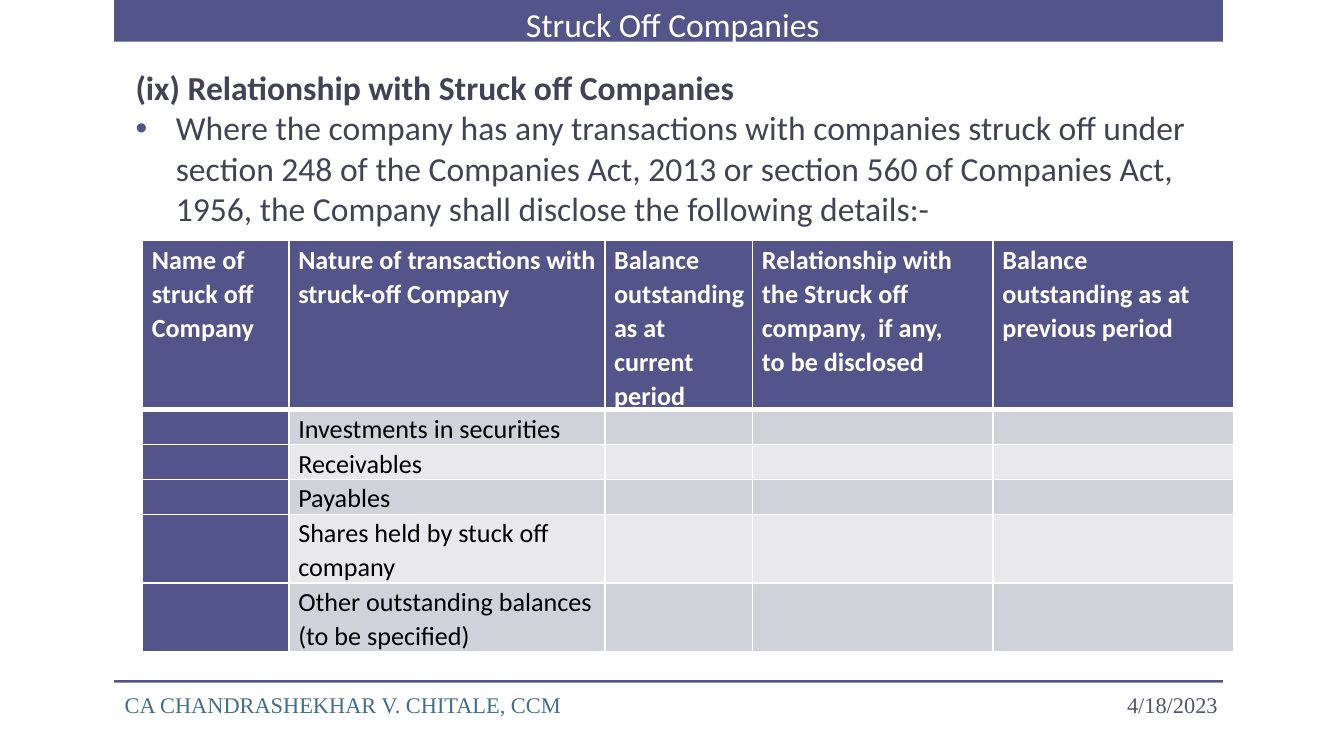
from lxml.etree import SubElement
from pptx import Presentation
from pptx.dml.color import RGBColor
from pptx.enum.shapes import MSO_SHAPE as Shape
from pptx.enum.text import MSO_ANCHOR as Anchor, PP_ALIGN as Align
from pptx.oxml.ns import qn
from pptx.util import Inches, Pt

COLORS = {
    "accent": "53548A",
    "body": "424456",
    "white": "FFFFFF",
    "black": "000000",
    "dark_band": "D1D1DA",
    "light_band": "E9E9ED",
    "date": "52546A",
    "author": "406F8D",
}
HEADERS = [
    "Name of struck off Company",
    "Nature of transactions with struck-off Company",
    "Balance outstanding as at current period",
    "Relationship with  the Struck off company,  if any, to be disclosed",
    "Balance outstanding as at previous period",
]
TRANSACTIONS = [
    "Investments in securities",
    "Receivables",
    "Payables",
    "Shares held by stuck off company",
    "Other outstanding balances (to be specified)",
]
COLUMN_WIDTHS = [1.09, 2.35, 1.1, 1.79, 1.79]
RIGHT_MARGINS = [0.03, 0.03, 0.03, 0.2, 0.2]
ROW_HEIGHTS = [0.96, 0.25, 0.25, 0.25, 0.49, 0.49]


def color(name):
    """Return the named colour."""
    return RGBColor.from_string(COLORS[name])


def style(paragraph, size, color_name, bold=False, font_name="Calibri"):
    """Set the font of a paragraph."""
    font = paragraph.font
    font.name, font.size, font.bold = font_name, Pt(size), bold
    font.color.rgb = color(color_name)


def add_bar(slide, left, top, width, height):
    """Add a plain accent bar."""
    bar = slide.shapes.add_shape(
        Shape.RECTANGLE, Inches(left), Inches(top), Inches(width), Inches(height))
    bar.shadow.inherit = False
    bar.fill.solid()
    bar.fill.fore_color.rgb = color("accent")
    bar.line.fill.background()


def add_text_frame(slide, left, top, width, height, wrap=True):
    """Add a text box and return its frame."""
    box = slide.shapes.add_textbox(
        Inches(left), Inches(top), Inches(width), Inches(height))
    box.text_frame.word_wrap = wrap
    return box.text_frame


def add_title(slide, left, top, width, height):
    """Add the title band with its centred title."""
    add_bar(slide, left, top, width, height)
    text_width = 2.42
    text_left = left + (width - text_width) / 2 + 0.05
    frame = add_text_frame(slide, text_left, top - 0.02, text_width, 0.4, wrap=False)
    paragraph = frame.paragraphs[0]
    paragraph.text = "Struck Off Companies"
    style(paragraph, 18, "white")


def add_bullet(paragraph, indent):
    """Give a paragraph a hanging accent bullet."""
    properties = paragraph._p.get_or_add_pPr()
    properties.set("marL", str(Inches(indent)))
    properties.set("indent", str(-Inches(indent)))
    bullet_color = SubElement(properties, qn("a:buClr"))
    SubElement(bullet_color, qn("a:srgbClr"), val=COLORS["accent"])
    SubElement(properties, qn("a:buFont"), typeface="Arial")
    SubElement(properties, qn("a:buChar"), char="•")


def add_body(slide, left, top, width, height):
    """Add the heading and the bulleted requirement."""
    frame = add_text_frame(slide, left, top, width, height)
    heading = frame.paragraphs[0]
    heading.text = "(ix) Relationship with Struck off Companies"
    requirement = frame.add_paragraph()
    requirement.text = (
        "Where the company has any transactions with companies struck off under "
        "section 248 of the Companies Act, 2013 or section 560 of Companies Act, "
        "1956, the Company shall disclose the following details:-")
    add_bullet(requirement, 0.3)
    style(heading, 18, "body", bold=True)
    style(requirement, 18, "body")


def add_borders(cell, bottom_width):
    """Draw white borders around a cell."""
    properties = cell._tc.get_or_add_tcPr()
    widths = {"a:lnL": 1, "a:lnR": 1, "a:lnT": 1, "a:lnB": bottom_width}
    for index, (tag, width) in enumerate(widths.items()):
        line = SubElement(properties, qn(tag), w=str(Pt(width)))
        fill = SubElement(line, qn("a:solidFill"))
        SubElement(fill, qn("a:srgbClr"), val=COLORS["white"])
        properties.insert(index, line)


def fill_cell(cell, text, fill_name, is_header, right_margin):
    """Set the text, fill and borders of a cell."""
    cell.margin_left, cell.margin_right = Inches(0.07), Inches(right_margin)
    cell.margin_top, cell.margin_bottom = Inches(0.01), 0
    cell.fill.solid()
    cell.fill.fore_color.rgb = color(fill_name)
    add_borders(cell, 3 if is_header else 1)
    paragraph = cell.text_frame.paragraphs[0]
    paragraph.line_spacing = 1.07
    if text:
        paragraph.text = text
        style(paragraph, 14, "white" if is_header else "black", bold=is_header)
    else:
        paragraph._p.get_or_add_endParaRPr().set("sz", "1200")


def add_disclosure_table(slide, left, top):
    """Add the table of balances with struck off companies."""
    rows = [HEADERS] + [["", name, "", "", ""] for name in TRANSACTIONS]
    table = slide.shapes.add_table(
        len(rows), len(HEADERS), Inches(left), Inches(top),
        Inches(sum(COLUMN_WIDTHS)), Inches(sum(ROW_HEIGHTS))).table
    for column, width in zip(table.columns, COLUMN_WIDTHS):
        column.width = Inches(width)
    for row, height in zip(table.rows, ROW_HEIGHTS):
        row.height = Inches(height)
    for row_index, texts in enumerate(rows):
        is_header = row_index == 0
        band = "dark_band" if row_index % 2 else "light_band"
        for column_index, text in enumerate(texts):
            fill_name = "accent" if is_header or column_index == 0 else band
            right_margin = RIGHT_MARGINS[column_index] if is_header else 0.03
            fill_cell(table.cell(row_index, column_index), text,
                      fill_name, is_header, right_margin)


def add_footer(slide, left, top, width):
    """Add the footer rule, author and date."""
    add_bar(slide, left, top, width, 0.02)
    entries = [
        ("4/18/2023", left + 5.98, 2.33, Align.RIGHT, "date"),
        ("CA CHANDRASHEKHAR V. CHITALE, CCM", left - 0.02, 5.33, Align.LEFT, "author"),
    ]
    for text, text_left, text_width, alignment, color_name in entries:
        frame = add_text_frame(slide, text_left, top + 0.03, text_width, 0.3)
        frame.vertical_anchor = Anchor.MIDDLE
        paragraph = frame.paragraphs[0]
        paragraph.text = text
        paragraph.alignment = alignment
        style(paragraph, 12, color_name, font_name="Times New Roman")


def main():
    """Build and save the presentation."""
    presentation = Presentation()
    presentation.slide_width = Inches(10)
    presentation.slide_height = Inches(10 * 9 / 16)
    slide = presentation.slides.add_slide(presentation.slide_layouts[6])
    add_title(slide, 0.85, 0, 8.25, 0.31)
    add_body(slide, 0.91, 0.45, 8.25, 3.84)
    add_disclosure_table(slide, 1.06, 1.79)
    add_footer(slide, 0.85, 5.06, 8.25)
    presentation.save("out.pptx")


if __name__ == "__main__":
    main()
